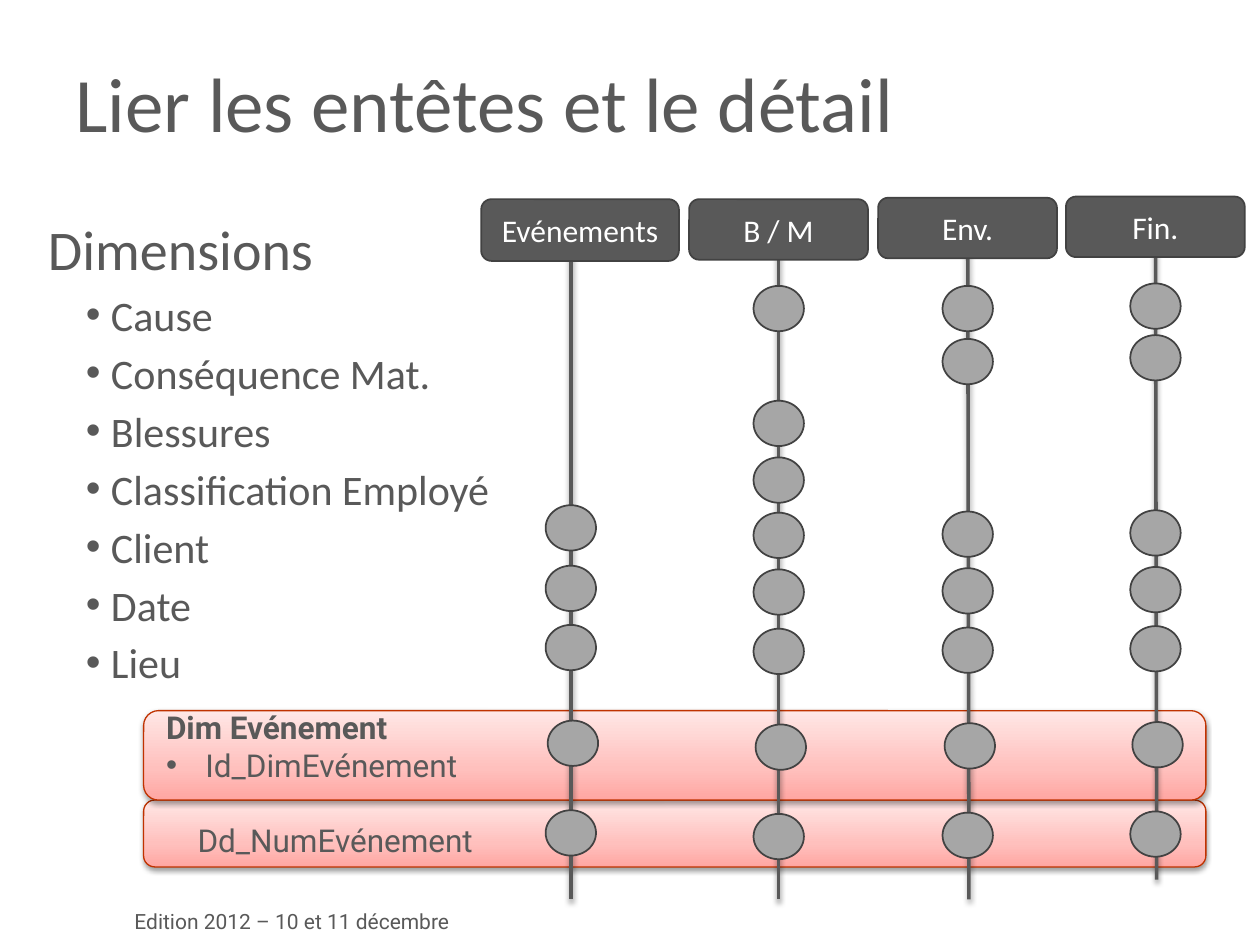
from lxml.etree import SubElement
from pptx import Presentation
from pptx.dml.color import RGBColor
from pptx.enum.shapes import MSO_CONNECTOR, MSO_SHAPE
from pptx.enum.text import MSO_ANCHOR, MSO_AUTO_SIZE, PP_ALIGN
from pptx.oxml import parse_xml
from pptx.oxml.ns import nsdecls, qn
from pptx.util import Pt

COLORS = {
    "text": "595959", "white": "FFFFFF", "dot": "A6A6A6", "outline": "424242",
    "bar_line": "C03200", "bar_low": "FFA6A2", "bar_mid": "FFC0BD",
    "bar_high": "FFE7E6", "shadow": "000000",
}
FORMATS = {
    "title": {"name": "Calibri", "size": Pt(44)},
    "heading": {"name": "Calibri", "size": Pt(32)},
    "item": {"name": "Calibri", "size": Pt(24)},
    "header": {"name": "Calibri", "size": Pt(18)},
    "label": {"name": "Roboto", "size": Pt(18), "bold": False},
    "label_bold": {"name": "Roboto", "size": Pt(18), "bold": True},
    "footer": {"name": "Roboto", "size": Pt(12)},
}
DIMENSIONS = ["Cause", "Conséquence Mat.", "Blessures", "Classification Employé",
              "Client", "Date", "Lieu"]
DOT_WIDTH, DOT_HEIGHT = 28.8, 25.9
DIM_EVENT_SHIFT = 1.2

# name, header box, line (x at top, x at bottom, bottom), dot tops;
# the last two dots lie on the bars
COLUMNS = [
    ("Evénements", (275, 113.8, 113, 35.3), (326.2, 326.2, 514),
     [288.7, 323.3, 357.1, 411.8, 463]),
    ("B / M", (393.8, 113.8, 102.2, 34.6), (445, 445, 514),
     [163.4, 229, 261.4, 293, 325.4, 359.3, 414, 465.1]),
    ("Env.", (501.8, 113, 102.2, 34.6), (553, 553.7, 514),
     [163.4, 193.7, 292.3, 324.7, 358.6, 413.3, 464.4]),
    ("Fin.", (609.1, 112.3, 102.2, 34.6), (660.3, 661, 502.6),
     [162, 191.5, 291.6, 324, 357.8, 412.6, 463.7]),
]


def rgb(color):
    return RGBColor.from_string(COLORS[color])


def points(*values):
    return [Pt(value) for value in values]


class SlideBuilder:
    def __init__(self, slide):
        self.slide = slide

    def add_text(self, paragraph, text, style, color="text"):
        run = paragraph.add_run()
        run.text = text
        for name, value in FORMATS[style].items():
            setattr(run.font, name, value)
        run.font.color.rgb = rgb(color)

    def indent(self, paragraph, left, hanging=0, bullet=None):
        properties = paragraph._p.get_or_add_pPr()
        properties.set("marL", str(Pt(left)))
        properties.set("indent", str(-Pt(hanging)))
        if bullet:
            SubElement(properties, qn("a:buFont")).set("typeface", "Arial")
            SubElement(properties, qn("a:buChar")).set("char", bullet)
        else:
            SubElement(properties, qn("a:buNone"))

    def add_shadow(self, shape):
        properties = shape._element.spPr
        for effects in properties.findall(qn("a:effectLst")):
            properties.remove(effects)
        properties.append(parse_xml(
            f'<a:effectLst {nsdecls("a")}><a:outerShdw blurRad="{Pt(3.1)}" '
            f'dist="{Pt(1.6)}" dir="5400000" rotWithShape="0">'
            f'<a:srgbClr val="{COLORS["shadow"]}"><a:alpha val="38000"/></a:srgbClr>'
            '</a:outerShdw></a:effectLst>'))

    def placeholder(self, shape, box):
        shape.left, shape.top, shape.width, shape.height = points(*box)
        shape.text_frame.auto_size = MSO_AUTO_SIZE.NONE
        return shape.text_frame

    def title(self, text, box):
        frame = self.placeholder(self.slide.shapes.title, box)
        frame.vertical_anchor = MSO_ANCHOR.MIDDLE
        frame.paragraphs[0].alignment = PP_ALIGN.LEFT
        self.add_text(frame.paragraphs[0], text, "title")

    def body(self, heading, items, box):
        frame = self.placeholder(self.slide.placeholders[1], box)
        paragraph = frame.paragraphs[0]
        self.indent(paragraph, 0)
        paragraph.space_before = Pt(0)
        self.add_text(paragraph, heading, "heading")
        for item in items:
            paragraph = frame.add_paragraph()
            paragraph.level = 1
            self.indent(paragraph, 36, 14.4, "•")
            paragraph.space_before = Pt(4.3)
            self.add_text(paragraph, item, "item")

    def text_box(self, box):
        frame = self.slide.shapes.add_textbox(*points(*box)).text_frame
        frame.word_wrap = False
        return frame

    def shape(self, kind, box, fill, line, line_width):
        shape = self.slide.shapes.add_shape(kind, *points(*box))
        shape.shadow.inherit = False
        shape.fill.solid()
        shape.fill.fore_color.rgb = rgb(fill)
        shape.line.color.rgb = rgb(line)
        shape.line.width = Pt(line_width)
        return shape

    def bar(self, box):
        bar = self.shape(MSO_SHAPE.ROUNDED_RECTANGLE, box, "bar_mid", "bar_line", 0.75)
        stops = "".join(
            f'<a:gs pos="{position * 1000}"><a:srgbClr val="{COLORS[color]}"/></a:gs>'
            for position, color in [(0, "bar_low"), (35, "bar_mid"), (100, "bar_high")])
        properties = bar._element.spPr
        solid_fill = properties.find(qn("a:solidFill"))
        solid_fill.addprevious(parse_xml(
            f'<a:gradFill {nsdecls("a")} rotWithShape="1"><a:gsLst>{stops}</a:gsLst>'
            '<a:lin ang="16200000" scaled="0"/></a:gradFill>'))
        properties.remove(solid_fill)
        self.add_shadow(bar)

    def line(self, start, end):
        line = self.slide.shapes.add_connector(
            MSO_CONNECTOR.STRAIGHT, *points(*start, *end))
        line.line.color.rgb = rgb("text")
        line.line.width = Pt(2)
        self.add_shadow(line)

    def header(self, text, box):
        header = self.shape(MSO_SHAPE.ROUNDED_RECTANGLE, box, "text", "outline", 1)
        frame = header.text_frame
        frame.vertical_anchor = MSO_ANCHOR.MIDDLE
        frame.paragraphs[0].alignment = PP_ALIGN.CENTER
        self.add_text(frame.paragraphs[0], text, "header", "white")

    def dot(self, center, top):
        box = (center - DOT_WIDTH / 2, top, DOT_WIDTH, DOT_HEIGHT)
        self.shape(MSO_SHAPE.OVAL, box, "dot", "outline", 1)


def main():
    presentation = Presentation()
    presentation.slide_width, presentation.slide_height = points(720, 540)
    builder = SlideBuilder(presentation.slides.add_slide(presentation.slide_layouts[1]))

    # Title, dimension list and footer
    builder.title("Lier les entêtes et le détail", (36, 21.6, 648, 72.7))
    builder.body("Dimensions", DIMENSIONS, (20.2, 119, 493.2, 287.3))
    footer = builder.text_box((69.8, 515.5, 199.4, 21.6))
    builder.add_text(footer.paragraphs[0], "Edition 2012 – 10 et 11 décembre", "footer")

    # Highlighted bars
    for top, height in [(457.2, 38.2), (406.1, 51.1)]:
        builder.bar((82.1, top, 607, height))

    # Event dimension labels
    labels = builder.text_box((87.8, 401, 198, 94.3))
    builder.add_text(labels.paragraphs[0], "Dim Evénement", "label_bold")
    paragraph = labels.add_paragraph()
    builder.indent(paragraph, 22.5, 22.5, "•")
    builder.add_text(paragraph, "Id_DimEvénement", "label")
    paragraph = labels.add_paragraph()
    builder.indent(paragraph, 18)
    paragraph.space_before = Pt(21.2)
    builder.add_text(paragraph, "Dd_NumEvénement", "label")

    # Fact columns: line, header, dots
    for name, box, (top_x, bottom_x, bottom), dot_tops in COLUMNS:
        builder.line((top_x, 136.5), (bottom_x, bottom))
        builder.header(name, box)
        for index, top in enumerate(dot_tops):
            on_dim_event = index == len(dot_tops) - 2
            builder.dot(top_x + (DIM_EVENT_SHIFT if on_dim_event else 0), top)

    presentation.save("out.pptx")


if __name__ == "__main__":
    main()
